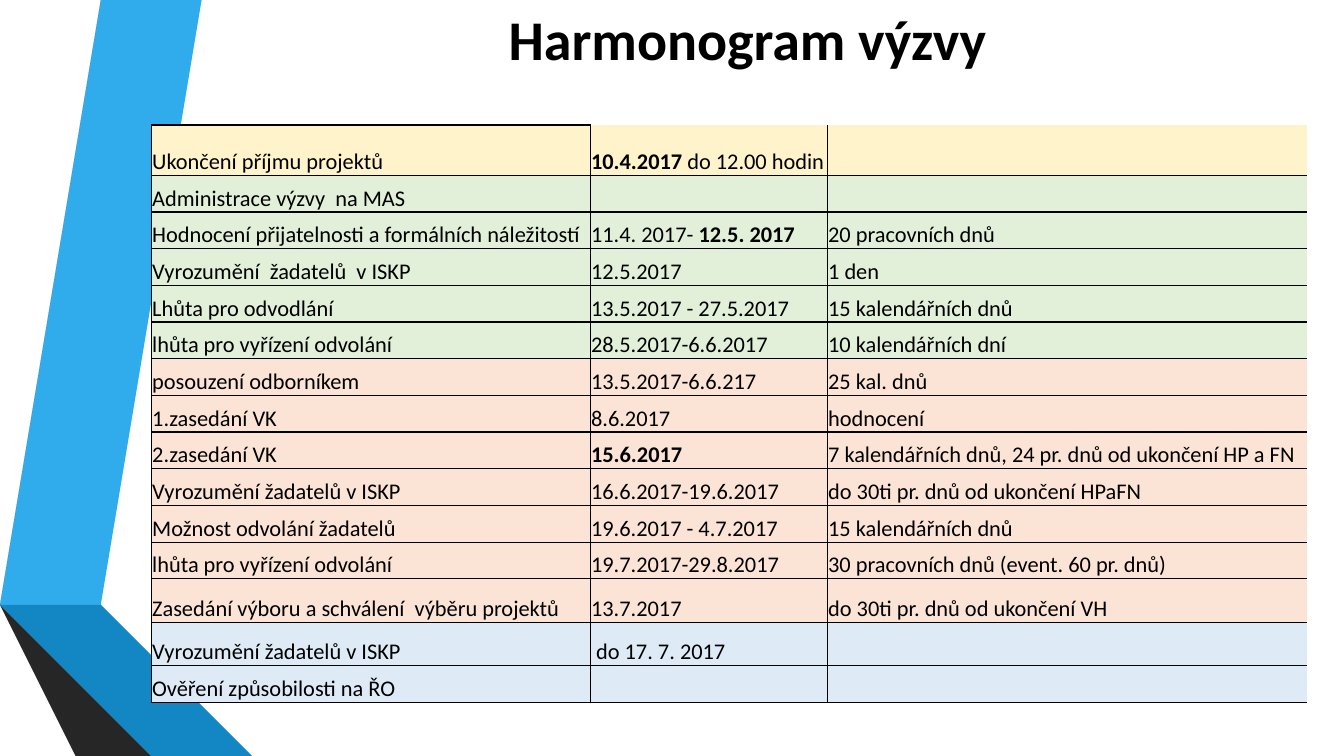
import pptx
import pptx.util
import pptx.dml.color
import pptx.enum.text
import pptx.oxml
from dataclasses import dataclass
from itertools import accumulate
from pptx.oxml import ns

SLIDE_W, SLIDE_H = 13.33, 7.5


@dataclass(frozen=True)
class Theme:
    font: str = "Calibri"
    title_size: int = 40
    table_size: int = 16
    ink: str = "000000"
    deadline: str = "FFF3CB"
    admin: str = "E2EFD9"
    evaluation: str = "FBE4D5"
    authority: str = "DEEBF6"
    border: float = 1


THEME = Theme()

# Ribbon bands: colour and outline, in hundredths of an inch
RIBBON = [
    ("30ACEC", [(50, 578), (77, 583), (173, 0), (145, 0)]),
    ("595959", [(139, 0), (111, 0), (16, 573), (44, 577)]),
    ("262626", [(16, 573), (145, 750), (151, 750)]),
    ("0C5A82", [(50, 579), (208, 750), (214, 750)]),
    ("1287C3", [(50, 579), (214, 750), (283, 750), (77, 583), (50, 578)]),
    ("404040", [(202, 750), (48, 583), (43, 578), (44, 577), (16, 573), (151, 750)]),
]

# Table grid: relative column widths, and the columns that open each visible section
COLUMNS = [1.84, 0.92, 0.92, 0.67, 1.09, 0.56, 0.36, 0.25, 0.09, 4.76]
SECTIONS = (0, 4, 9)
ROW_H, TALL_H, FIRST_H = 0.364, 0.43, 0.5

# How the grid columns are merged within a row
STEP = (2, 1, 1, 4, 1, 1)
SINGLE_DATE = (2, 1, 1, 1, 3, 1, 1)
MEETING = (1, 1, 1, 1, 1, 3, 1, 1)

# Height, fill, spans, then step, date and duration; *bold*
SCHEDULE = [
    (FIRST_H, THEME.deadline, (2, 1, 1, 5, 1),
     "Ukončení příjmu projektů", "*10.4.2017* do 12.00 hodin", ""),
    (ROW_H, THEME.admin, SINGLE_DATE, "Administrace výzvy  na MAS", "", ""),
    (ROW_H, THEME.admin, (4, 4, 1, 1), "Hodnocení přijatelnosti a formálních náležitostí",
     "11.4. 2017- *12.5. 2017*", "20 pracovních dnů"),
    (ROW_H, THEME.admin, SINGLE_DATE, "Vyrozumění  žadatelů  v ISKP", "12.5.2017", "1 den"),
    (ROW_H, THEME.admin, STEP,
     "Lhůta pro odvodlání", "13.5.2017 - 27.5.2017", "15 kalendářních dnů"),
    (ROW_H, THEME.admin, STEP,
     "lhůta pro vyřízení odvolání", "28.5.2017-6.6.2017", "10 kalendářních dní"),
    (ROW_H, THEME.evaluation, STEP,
     "posouzení odborníkem", "13.5.2017-6.6.217", "25 kal. dnů"),
    (ROW_H, THEME.evaluation, MEETING, "1.zasedání VK", "8.6.2017", "hodnocení"),
    (ROW_H, THEME.evaluation, MEETING, "2.zasedání VK", "*15.6.2017*",
     "7 kalendářních dnů, 24 pr. dnů od ukončení HP a FN"),
    (ROW_H, THEME.evaluation, STEP, "Vyrozumění žadatelů v ISKP",
     "16.6.2017-19.6.2017", "do 30ti pr. dnů od ukončení HPaFN"),
    (ROW_H, THEME.evaluation, STEP,
     "Možnost odvolání žadatelů", "19.6.2017 - 4.7.2017", "15 kalendářních dnů"),
    (ROW_H, THEME.evaluation, STEP, "lhůta pro vyřízení odvolání",
     "19.7.2017-29.8.2017", "30 pracovních dnů (event. 60 pr. dnů)"),
    (TALL_H, THEME.evaluation, (4, 2, 2, 1, 1),
     "Zasedání výboru a schválení  výběru projektů", "13.7.2017",
     "do 30ti pr. dnů od ukončení VH"),
    (TALL_H, THEME.authority, (2, 1, 1, 2, 3, 1),
     "Vyrozumění žadatelů v ISKP", " do 17. 7. 2017", ""),
    (ROW_H, THEME.authority, (2, 1, 1, 2, 1, 2, 1), "Ověření způsobilosti na ŘO", "", ""),
]


def rgb(code):
    return pptx.dml.color.RGBColor.from_string(code)


def inches(box):
    return [pptx.util.Inches(length) for length in box]


def style_run(run, size, bold):
    run.font.name, run.font.size, run.font.bold = THEME.font, pptx.util.Pt(size), bold
    run.font.color.rgb = rgb(THEME.ink)


def add_ribbon(slide, box):
    left, top, _, height = box
    unit = height / 750
    for colour, outline in RIBBON:
        points = [(left + x * unit, top + y * unit) for x, y in outline]
        builder = slide.shapes.build_freeform(*points[0], scale=pptx.util.Inches(1))
        builder.add_line_segments(points[1:], close=True)
        band = builder.convert_to_shape()
        band.shadow.inherit = False
        band.fill.solid()
        band.fill.fore_color.rgb = rgb(colour)
        band.line.fill.background()


def add_title(slide, box, wording):
    frame = slide.shapes.add_textbox(*inches(box)).text_frame
    frame.word_wrap = True
    frame.text = wording
    frame.paragraphs[0].alignment = pptx.enum.text.PP_ALIGN.CENTER
    style_run(frame.paragraphs[0].runs[0], THEME.title_size, True)


def set_borders(cell, drawn):
    for side in "LRTB":
        paint = (f'<a:solidFill><a:srgbClr val="{THEME.ink}"/></a:solidFill>'
                 if side in drawn else "<a:noFill/>")
        cell._tc.get_or_add_tcPr().append(pptx.oxml.parse_xml(
            f'<a:ln{side} {ns.nsdecls("a")} w="{pptx.util.Pt(THEME.border)}">{paint}</a:ln{side}>'))


def fill_cell(cell, colour, wording):
    cell.fill.solid()
    cell.fill.fore_color.rgb = rgb(colour)
    cell.vertical_anchor = pptx.enum.text.MSO_ANCHOR.BOTTOM
    cell.margin_left = cell.margin_right = cell.margin_top = pptx.util.Inches(0.01)
    cell.margin_bottom = 0
    # Every second piece between asterisks is bold
    for index, piece in enumerate(wording.split("*")):
        if piece:
            run = cell.text_frame.paragraphs[0].add_run()
            run.text = piece
            style_run(run, THEME.table_size, index % 2 == 1)


def add_schedule(slide, box):
    _, _, width, height = box
    table = slide.shapes.add_table(len(SCHEDULE), len(COLUMNS), *inches(box)).table
    table.first_row = table.horz_banding = False
    for column, share in zip(table.columns, COLUMNS):
        column.width = pptx.util.Inches(width * share / sum(COLUMNS))
    total = sum(entry[0] for entry in SCHEDULE)

    for r, (share, colour, spans, *wordings) in enumerate(SCHEDULE):
        table.rows[r].height = pptx.util.Inches(height * share / total)
        text_at = dict(zip(SECTIONS, wordings))
        last_of = {end - span: end - 1 for end, span in zip(accumulate(spans), spans)}
        for c in range(len(COLUMNS)):
            last = last_of.get(c, c)
            cell = table.cell(r, c)
            # The first row is open above the date and duration, the right edge is open
            drawn = "B" + ("T" if r or c < SECTIONS[1] else "")
            drawn += "L" if c in SECTIONS else ""
            drawn += "R" if last + 1 in SECTIONS else ""
            set_borders(cell, drawn)
            fill_cell(cell, colour, text_at.get(c, ""))
            if last > c:
                cell.merge(table.cell(r, last))


def main():
    deck = pptx.Presentation()
    deck.slide_width, deck.slide_height = inches((SLIDE_W, SLIDE_H))
    slide = deck.slides.add_slide(deck.slide_layouts[6])
    add_ribbon(slide, (0, 0, 2.83, SLIDE_H))
    add_title(slide, (2.18, 0, 10.47, 1.08), "Harmonogram výzvy")
    add_schedule(slide, (1.5, 1.24, 11.47, 5.73))
    deck.save("out.pptx")


if __name__ == "__main__":
    main()
